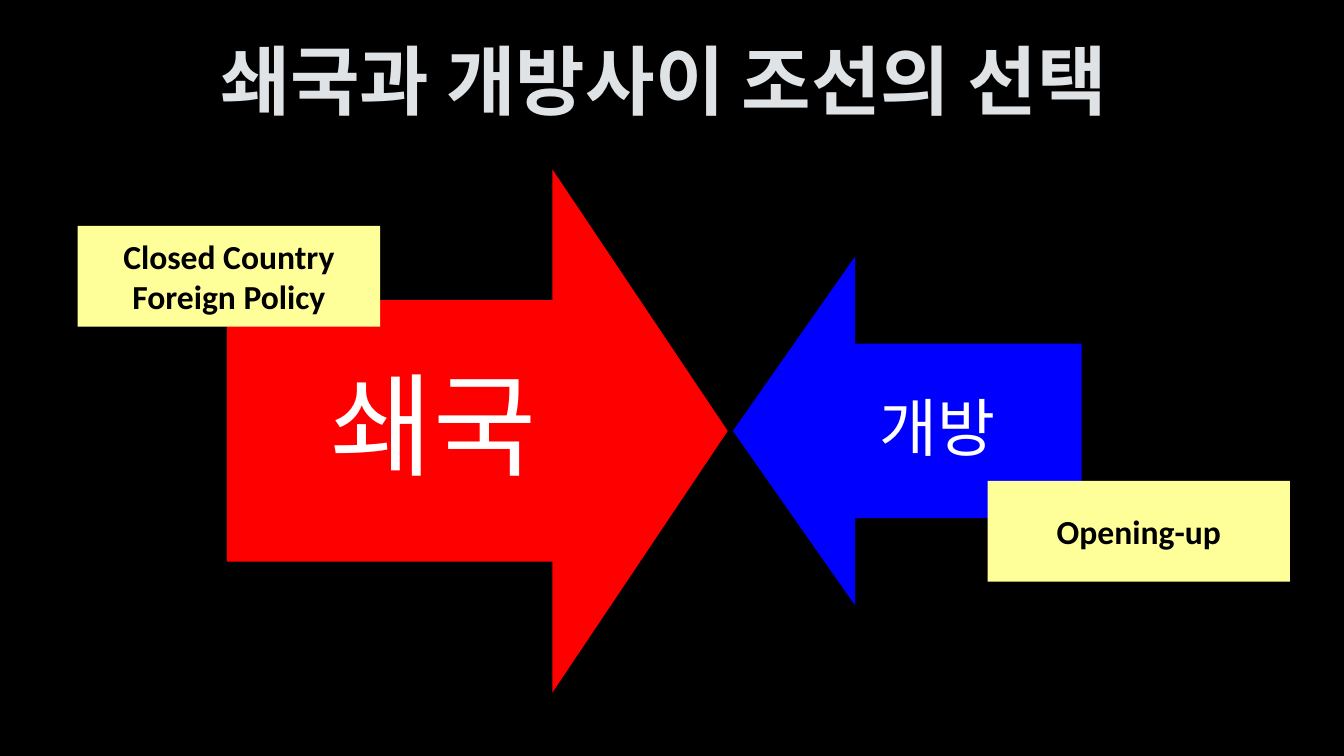
from dataclasses import dataclass

from lxml.etree import SubElement
from pptx import Presentation
from pptx.dml.color import RGBColor as RGB
from pptx.enum.shapes import MSO_SHAPE as Shape
from pptx.enum.text import MSO_ANCHOR as Anchor, MSO_AUTO_SIZE as AutoSize, PP_ALIGN as Align
from pptx.oxml.ns import qn
from pptx.util import Cm, Pt


@dataclass(frozen=True)
class Theme:
    font: str = "Calibri"
    background: str = "000000"
    title: str = "DFE3E5"
    title_outline: str = "404040"
    closed: str = "FF0000"
    opening: str = "0000FF"
    note: str = "FFFF99"
    note_text: str = "000000"
    label_text: str = "FFFFFF"
    title_size: int = 54
    closed_size: int = 80
    opening_size: int = 45
    note_size: int = 24


@dataclass(frozen=True)
class Arrow:
    text: str
    left: float
    length: float
    span: float
    points_right: bool
    fill: str
    size: int
    inset: float


@dataclass(frozen=True)
class Note:
    lines: tuple[str, ...]
    left: float
    top: float


THEME = Theme()
AXIS_Y = 10.86
HEAD = 0.35
NOTE_W, NOTE_H = 7.62, 2.54

ARROWS = (
    Arrow("쇄국", 5.72, 12.62, 13.18, True, THEME.closed, THEME.closed_size, 1.57),
    Arrow("개방", 18.47, 8.79, 8.79, False, THEME.opening, THEME.opening_size, 0.89),
)
NOTES = (
    Note(("Closed Country", "Foreign Policy"), 1.96, 5.69),
    Note(("Opening-up",), 24.89, 12.12),
)


def write(tf, lines: tuple[str, ...], size: int, color: str, bold: bool = False) -> None:
    tf.word_wrap = True
    tf.auto_size = AutoSize.NONE
    tf.vertical_anchor = Anchor.MIDDLE
    for i, line in enumerate(lines):
        p = tf.add_paragraph() if i else tf.paragraphs[0]
        p.alignment = Align.CENTER
        r = p.add_run()
        r.text = line
        r.font.name = THEME.font
        r.font.size = Pt(size)
        r.font.bold = bold
        r.font.color.rgb = RGB.from_string(color)


def paint(sp, color: str) -> None:
    sp.shadow.inherit = False
    sp.fill.solid()
    sp.fill.fore_color.rgb = RGB.from_string(color)
    sp.line.fill.background()


def add_title(s, text: str) -> None:
    sp = s.shapes.title
    sp.left, sp.top, sp.width, sp.height = Cm(0.43), Cm(0.64), Cm(33.02), Cm(2.69)
    write(sp.text_frame, (text,), THEME.title_size, THEME.title, bold=True)
    props = sp.text_frame.paragraphs[0].runs[0].font._element
    line = SubElement(props, qn("a:ln"), w=str(Pt(0.75)))
    color = SubElement(SubElement(line, qn("a:solidFill")), qn("a:srgbClr"), val=THEME.title_outline)
    SubElement(color, qn("a:alpha"), val="10000")
    props.insert(0, line)


def add_arrow(s, arrow: Arrow) -> None:
    center_x = arrow.left + arrow.length / 2
    sp = s.shapes.add_shape(
        Shape.DOWN_ARROW,
        Cm(center_x - arrow.span / 2), Cm(AXIS_Y - arrow.length / 2),
        Cm(arrow.span), Cm(arrow.length),
    )
    sp.rotation = 270 if arrow.points_right else 90
    sp.adjustments[0] = 0.5
    sp.adjustments[1] = HEAD
    paint(sp, arrow.fill)

    half_head = arrow.length * HEAD / 2
    label_left = arrow.left if arrow.points_right else arrow.left + half_head
    label = s.shapes.add_textbox(
        Cm(label_left), Cm(AXIS_Y - arrow.span / 4),
        Cm(arrow.length - half_head), Cm(arrow.span / 2),
    )
    tf = label.text_frame
    tf.margin_left = tf.margin_right = tf.margin_top = tf.margin_bottom = Cm(arrow.inset)
    write(tf, (arrow.text,), arrow.size, THEME.label_text)
    tf.paragraphs[0].line_spacing = 0.9


def add_note(s, note: Note) -> None:
    sp = s.shapes.add_shape(Shape.RECTANGLE, Cm(note.left), Cm(note.top), Cm(NOTE_W), Cm(NOTE_H))
    paint(sp, THEME.note)
    write(sp.text_frame, note.lines, THEME.note_size, THEME.note_text, bold=True)


def main() -> None:
    prs = Presentation()
    prs.slide_width, prs.slide_height = Cm(33.87), Cm(19.05)
    s = prs.slides.add_slide(prs.slide_layouts[5])
    s.background.fill.solid()
    s.background.fill.fore_color.rgb = RGB.from_string(THEME.background)
    add_title(s, "쇄국과 개방사이 조선의 선택 ")
    for arrow in ARROWS:
        add_arrow(s, arrow)
    for note in NOTES:
        add_note(s, note)
    prs.save("out.pptx")


if __name__ == "__main__":
    main()
